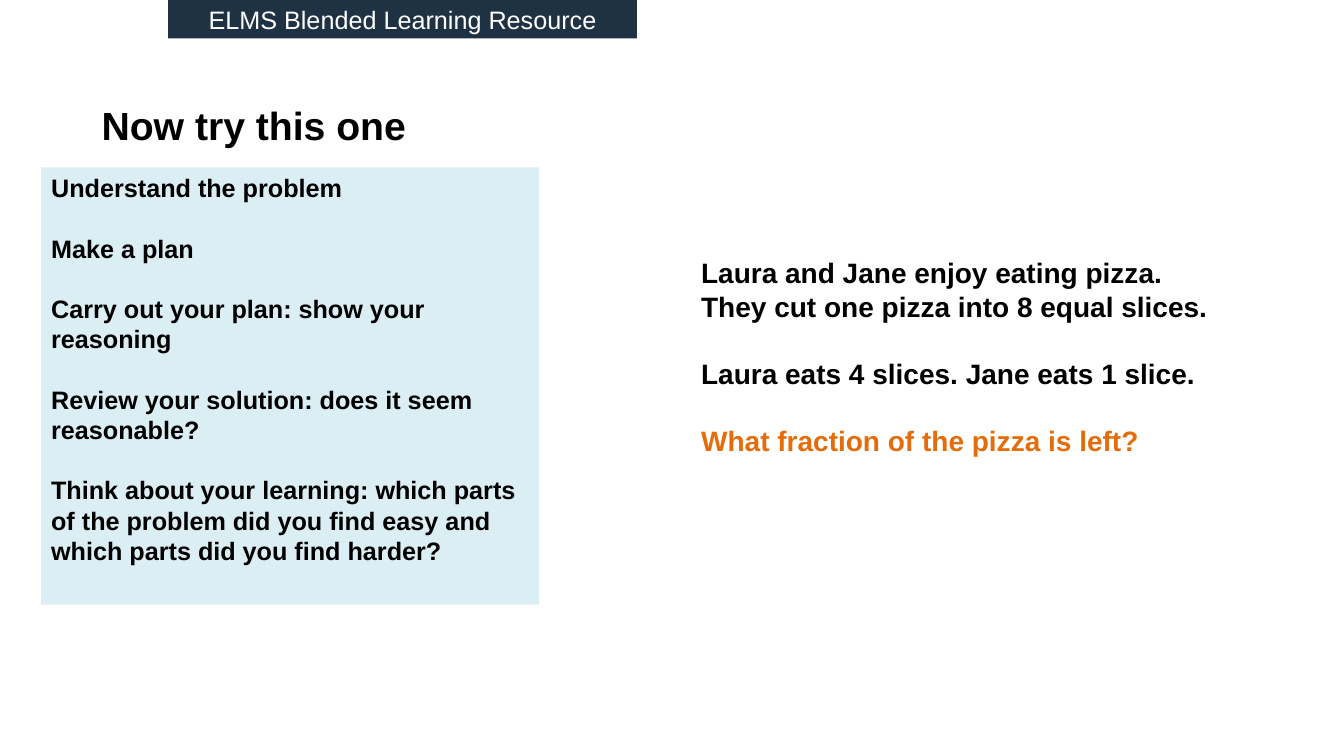
import pptx
import pptx.util
import pptx.dml.color
import pptx.enum.text
import pptx.enum.shapes

Pt = pptx.util.Pt
Cm = pptx.util.Cm
Align = pptx.enum.text.PP_ALIGN
Anchor = pptx.enum.text.MSO_ANCHOR


def color(code):
    return pptx.dml.color.RGBColor.from_string(code)


def write(frame, text, size=18, ink="000000", bold=True, gap=0,
          align=Align.LEFT, anchor=Anchor.TOP, font="Arial"):
    frame.word_wrap = True
    frame.vertical_anchor = anchor
    for i, line in enumerate(text):
        para = frame.paragraphs[0] if i == 0 else frame.add_paragraph()
        para.alignment = align
        if i:
            para.space_before = Pt(gap)
        run = para.add_run()
        run.text = line
        run.font.name = font
        run.font.size = Pt(size)
        run.font.bold = bold
        run.font.color.rgb = color(ink)


class Page:
    pale = "DBEEF4"
    navy = "1F3244"
    orange = "E46C0A"

    def __init__(self, deck):
        self.slide = deck.slides.add_slide(deck.slide_layouts[6])

    def label(self, box, text, **style):
        shape = self.slide.shapes.add_textbox(*map(Cm, box))
        write(shape.text_frame, text, **style)
        return shape

    def panel(self, box, fill, text, **style):
        kind = pptx.enum.shapes.MSO_SHAPE.RECTANGLE
        shape = self.slide.shapes.add_shape(kind, *map(Cm, box))
        shape.shadow.inherit = False
        shape.fill.solid()
        shape.fill.fore_color.rgb = color(fill)
        shape.line.fill.background()
        write(shape.text_frame, text, **style)


def main():
    deck = pptx.Presentation()
    deck.slide_width = Cm(33.87)
    deck.slide_height = Cm(19.05)
    page = Page(deck)

    page.label((2.31, 2.34, 22.86, 1.63), ["Now try this one"],
               size=28, anchor=Anchor.MIDDLE)
    page.panel((1.04, 4.22, 12.55, 11.02), page.pale, [
        "Understand the problem",
        "Make a plan",
        "Carry out your plan: show your reasoning",
        "Review your solution: does it seem reasonable?",
        "Think about your learning: which parts of the problem did you "
        "find easy and which parts did you find harder?",
    ], gap=21.6)
    page.panel((4.24, 0, 11.81, 0.97), page.navy,
               ["ELMS Blended Learning Resource"], ink="FFFFFF", bold=False,
               align=Align.CENTER, anchor=Anchor.MIDDLE)
    tale = page.label((17.42, 6.32, 13.49, 6.17), [
        "Laura and Jane enjoy eating pizza. "
        "They cut one pizza into 8 equal slices.",
        "Laura eats 4 slices. Jane eats 1 slice.",
        "What fraction of the pizza is left?",
    ], size=20, gap=24)
    last = tale.text_frame.paragraphs[-1]
    last.runs[0].font.color.rgb = color(page.orange)

    deck.save("out.pptx")


if __name__ == "__main__":
    main()
